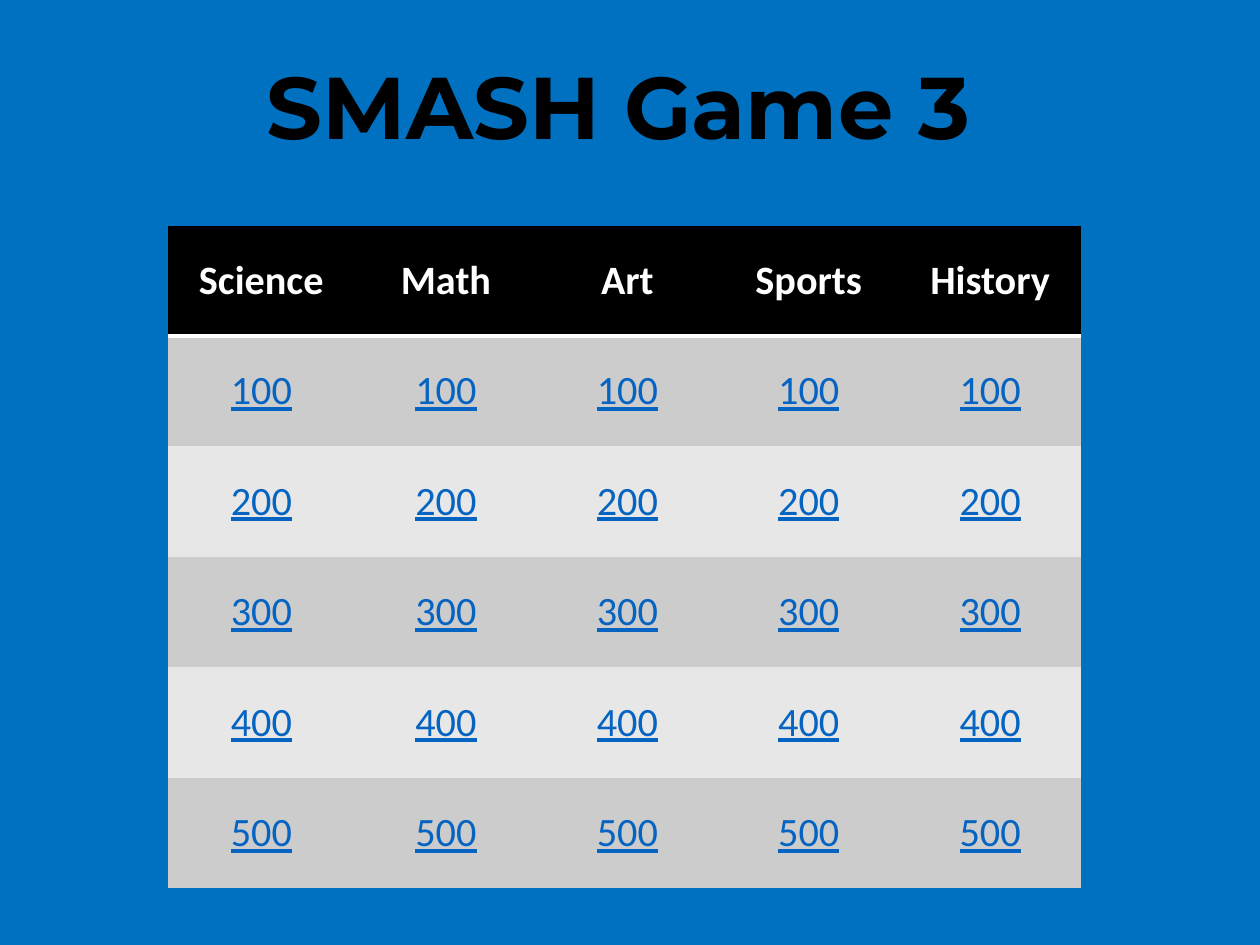
from lxml import etree
from pptx import Presentation
from pptx.dml.color import RGBColor
from pptx.enum.text import MSO_ANCHOR, PP_ALIGN
from pptx.oxml.ns import qn
from pptx.util import Inches, Pt

CENTER = PP_ALIGN.CENTER
MIDDLE = MSO_ANCHOR.MIDDLE
COLORS = {
    "background": "0070C0",
    "black": "000000",
    "white": "FFFFFF",
    "link": "0563C1",
    "band_dark": "CCCCCC",
    "band_light": "E7E7E7",
}
PLAIN_STYLE = "{2D5ABB26-0587-4C30-8999-92F81FD0307C}"
CATEGORIES = ["Science", "Math", "Art", "Sports", "History"]
POINTS = [100, 200, 300, 400, 500]


def rgb(name):
    """Return the named palette colour."""
    return RGBColor.from_string(COLORS[name])


def style_paragraph(p, font, size, color, bold=False, underline=False):
    """Centre a paragraph and set its font."""
    p.alignment = CENTER
    p.font.name = font
    p.font.size = Pt(size)
    p.font.bold = bold
    p.font.underline = underline
    p.font.color.rgb = rgb(color)


def add_title(s, text):
    """Add the game title."""
    box = s.shapes.add_textbox(Inches(1.66), Inches(0.58), Inches(6.5), Inches(0.61))
    tf = box.text_frame
    tf.word_wrap = True
    tf.vertical_anchor = MIDDLE
    p = tf.paragraphs[0]
    p.text = text
    p.line_spacing = 0.9
    style_paragraph(p, "Montserrat", 50, "black", bold=True)


def add_bottom_border(cell, color, width):
    """Draw a solid line under a cell."""
    line = etree.SubElement(cell._tc.get_or_add_tcPr(), qn("a:lnB"), w=str(Pt(width)))
    fill = etree.SubElement(line, qn("a:solidFill"))
    etree.SubElement(fill, qn("a:srgbClr"), val=COLORS[color])


def fill_cell(cell, text, fill, color, bold=False, underline=False):
    """Write one centred, coloured board cell."""
    cell.fill.solid()
    cell.fill.fore_color.rgb = rgb(fill)
    cell.vertical_anchor = MIDDLE
    cell.margin_left = cell.margin_right = Inches(0.08)
    cell.margin_top = cell.margin_bottom = Inches(0.04)
    p = cell.text_frame.paragraphs[0]
    p.text = text
    style_paragraph(p, "Calibri", 23, color, bold, underline)
    before = etree.SubElement(p._p.get_or_add_pPr(), qn("a:spcBef"))
    etree.SubElement(before, qn("a:spcPct"), val="20000")
    p._p.pPr.insert(0, before)


def add_board(s):
    """Add the board of categories and point values."""
    frame = s.shapes.add_table(len(POINTS) + 1, len(CATEGORIES), Inches(1.33),
                               Inches(1.79), Inches(7.25), Inches(5.26))
    table = frame.table
    table.first_row = True
    table.horz_banding = False
    table._tbl.tblPr.find(qn("a:tableStyleId")).text = PLAIN_STYLE
    for row in table.rows:
        row.height = Inches(5.26 / 6)
    for i, category in enumerate(CATEGORIES):
        table.columns[i].width = Inches(1.44 if i else 1.49)
        header = table.cell(0, i)
        add_bottom_border(header, "white", 2)
        fill_cell(header, category, "black", "white", bold=True)
        for j, value in enumerate(POINTS, 1):
            band = "band_dark" if j % 2 else "band_light"
            fill_cell(table.cell(j, i), str(value), band, "link", underline=True)


def main():
    """Build and save the game board slide."""
    prs = Presentation()
    prs.slide_width = Inches(10)
    prs.slide_height = Inches(7.5)
    s = prs.slides.add_slide(prs.slide_layouts[6])
    s.background.fill.solid()
    s.background.fill.fore_color.rgb = rgb("background")
    add_title(s, "SMASH Game 3")
    add_board(s)
    prs.save("out.pptx")


if __name__ == "__main__":
    main()
